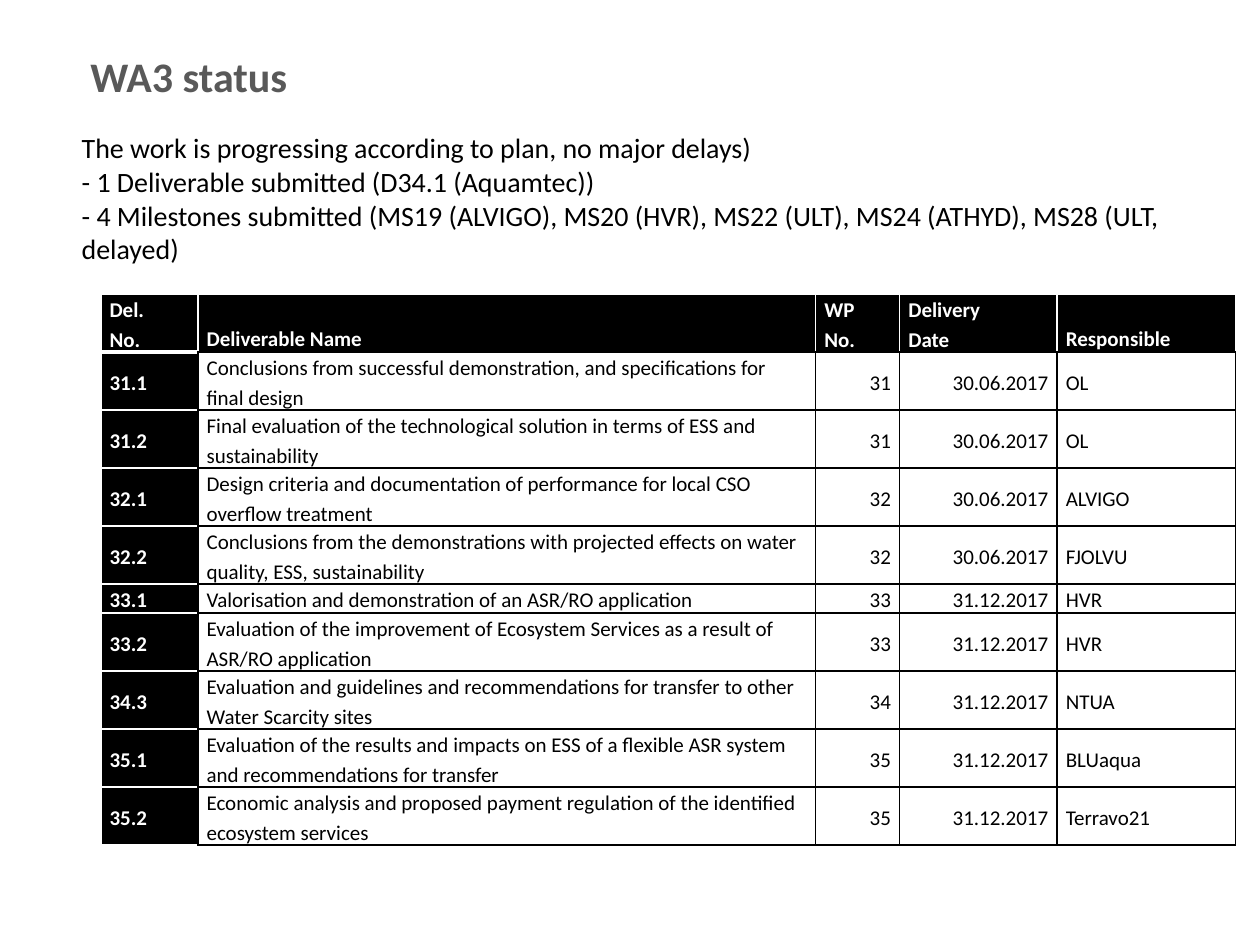
from lxml import etree
from pptx import Presentation
from pptx.dml.color import RGBColor
from pptx.enum import text
from pptx.oxml import ns
from pptx.util import Pt

BLACK, WHITE, GREY = "000000", "FFFFFF", "595959"
COLUMN_WIDTHS = [55.5, 353, 48, 90, 102]
HEADER_HEIGHT, LINE_HEIGHT, DOUBLE_HEIGHT = 28.8, 13.7, 26
HEADINGS = ["Del. \vNo.", "Deliverable Name", "WP\vNo.", "Delivery \vDate", "Responsible"]
SUMMER, WINTER = "30.06.2017", "31.12.2017"
DELIVERABLES = [
    ("31.1", "Conclusions from successful demonstration, and specifications for final design", "31", SUMMER, "OL"),
    ("31.2", "Final evaluation of the technological solution in terms of ESS and sustainability", "31", SUMMER, "OL"),
    ("32.1", "Design criteria and documentation of performance for local CSO overflow treatment", "32", SUMMER, "ALVIGO"),
    ("32.2", "Conclusions from the demonstrations with projected effects on water quality, ESS, sustainability",
     "32", SUMMER, "FJOLVU"),
    ("33.1", "Valorisation and demonstration of an ASR/RO application", "33", WINTER, "HVR"),
    ("33.2", "Evaluation of the improvement of Ecosystem Services as a result of ASR/RO application", "33", WINTER, "HVR"),
    ("34.3", "Evaluation and guidelines and recommendations for transfer to other Water Scarcity sites",
     "34", WINTER, "NTUA"),
    ("35.1", "Evaluation of the results and impacts on ESS of a flexible ASR system and recommendations for transfer",
     "35", WINTER, "BLUaqua"),
    ("35.2", "Economic analysis and proposed payment regulation of the identified ecosystem services",
     "35", WINTER, "Terravo21"),
]
STATUS = [
    "The work is progressing according to plan, no major delays)",
    "- 1 Deliverable submitted (D34.1 (Aquamtec))",
    "- 4 Milestones submitted (MS19 (ALVIGO), MS20 (HVR), MS22 (ULT), MS24 (ATHYD), MS28 (ULT, delayed)",
]


def rgb(value):
    return RGBColor.from_string(value)


def style_runs(frame, size, color, bold=False):
    for paragraph in frame.paragraphs:
        for run in paragraph.runs:
            run.font.name = "Calibri"
            run.font.size = Pt(size)
            run.font.bold = bold
            run.font.color.rgb = rgb(color)
        for line_break in paragraph._p.findall(ns.qn("a:br")):
            etree.SubElement(line_break, ns.qn("a:rPr"), sz=str(size * 100))


def add_text(slide, box, lines, size, color, bold=False):
    frame = slide.shapes.add_textbox(*map(Pt, box)).text_frame
    frame.word_wrap = True
    frame.auto_size = text.MSO_AUTO_SIZE.SHAPE_TO_FIT_TEXT
    frame.text = "\n".join(lines)
    style_runs(frame, size, color, bold)


def set_borders(cell, borders):
    properties = cell._tc.get_or_add_tcPr()
    for side, (color, width) in zip("LRTB", borders):
        line = etree.SubElement(properties, ns.qn(f"a:ln{side}"), w=str(Pt(width)))
        fill = etree.SubElement(line, ns.qn("a:solidFill"))
        etree.SubElement(fill, ns.qn("a:srgbClr"), val=color)


def cell_borders(row, column):
    light, dark = (WHITE, 1), (BLACK, 1)
    if row == 0:
        return [light, light, light, dark if column else (WHITE, 3)]
    return [dark] * 4 if column else [light, dark, light, light]


def fill_cell(cell, content, row, column):
    inverted = row == 0 or column == 0
    cell.margin_left = cell.margin_right = Pt(5)
    cell.margin_top = cell.margin_bottom = 0
    cell.vertical_anchor = text.MSO_ANCHOR.MIDDLE if row else text.MSO_ANCHOR.BOTTOM
    set_borders(cell, cell_borders(row, column))
    cell.fill.solid()
    cell.fill.fore_color.rgb = rgb(BLACK if inverted else WHITE)
    cell.text_frame.text = content
    paragraph = cell.text_frame.paragraphs[0]
    paragraph.line_spacing = 1.15
    if row and column in (2, 3):
        paragraph.alignment = text.PP_ALIGN.RIGHT
    style_runs(cell.text_frame, 12, WHITE if inverted else BLACK, inverted)


def add_deliverables(slide, box):
    rows = [HEADINGS, *DELIVERABLES]
    table = slide.shapes.add_table(len(rows), len(HEADINGS), *map(Pt, box)).table
    table.first_row = table.horz_banding = False
    for column, width in zip(table.columns, COLUMN_WIDTHS):
        column.width = Pt(width)
    for r, contents in enumerate(rows):
        body_height = DOUBLE_HEIGHT if len(contents[1]) > 60 else LINE_HEIGHT
        table.rows[r].height = Pt(body_height if r else HEADER_HEIGHT)
        for c, content in enumerate(contents):
            fill_cell(table.cell(r, c), content, r, c)


def main():
    deck = Presentation()
    deck.slide_width, deck.slide_height = Pt(720), Pt(540)
    slide = deck.slides.add_slide(deck.slide_layouts[6])
    add_text(slide, (44.6, 25.2, 570, 36), ["WA3 status"], 24, GREY, True)
    add_deliverables(slide, (57.6, 168, 648.5, 314.6))
    add_text(slide, (39.6, 71.3, 683.3, 85), STATUS, 16, BLACK)
    deck.save("out.pptx")


if __name__ == "__main__":
    main()
